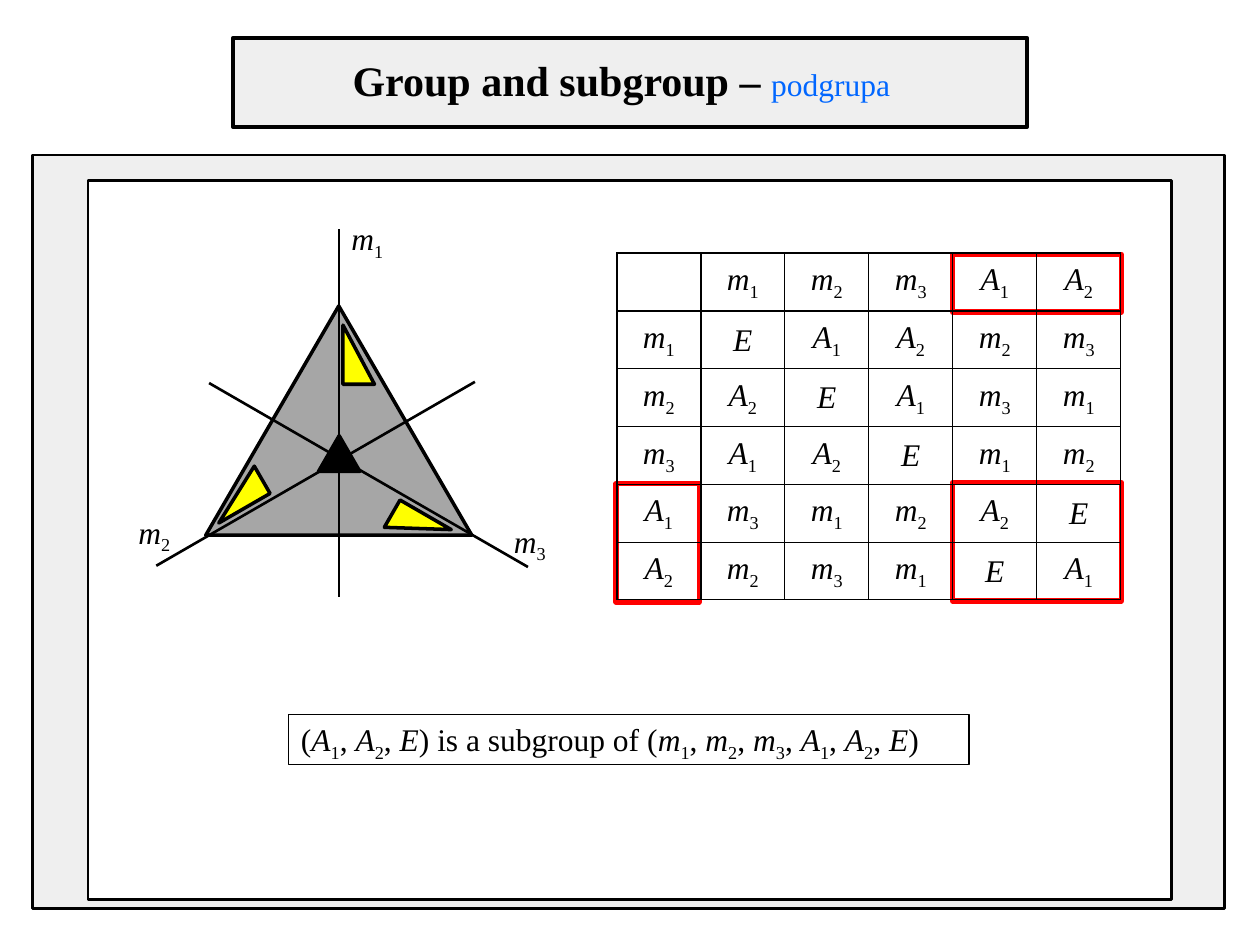
from itertools import groupby

from lxml.etree import SubElement
from pptx import Presentation
from pptx.dml.color import RGBColor
from pptx.enum.shapes import MSO_CONNECTOR, MSO_SHAPE
from pptx.enum.text import MSO_ANCHOR, MSO_AUTO_SIZE, PP_ALIGN
from pptx.oxml.ns import qn
from pptx.util import Pt

BLACK, RED, YELLOW, BLUE = "000000", "FF0000", "FFFF00", "0066FF"
PANEL, GREY, WHITE = "EFEFEF", "A6A6A6", "FFFFFF"


def rgb(value):
    return RGBColor.from_string(value)


def notation_kind(char):
    if char in "mAE":
        return "symbol"
    return "index" if char.isdigit() else "plain"


class SlideBuilder:
    font = "Times New Roman"
    size = 18

    def __init__(self, slide):
        self.slide = slide
        self.shapes = slide.shapes

    def run(self, paragraph, text, size=size, color=BLACK, bold=False, italic=False):
        run = paragraph.add_run()
        run.text = text
        run.font.name = self.font
        run.font.size = Pt(size)
        run.font.color.rgb = rgb(color)
        run.font.bold = bold
        run.font.italic = italic
        return run

    def notation(self, paragraph, text):
        for kind, chars in groupby(text, notation_kind):
            run = self.run(paragraph, "".join(chars), italic=kind == "symbol")
            if kind == "index":
                run.font._element.set("baseline", "-25000")

    def shape(self, preset, box, fill=None, line=BLACK, weight=1.5, rotation=0):
        shape = self.shapes.add_shape(preset, *map(Pt, box))
        shape.shadow.inherit = False
        shape.rotation = rotation
        if fill:
            shape.fill.solid()
            shape.fill.fore_color.rgb = rgb(fill)
        else:
            shape.fill.background()
        shape.line.color.rgb = rgb(line)
        shape.line.width = Pt(weight)
        return shape

    def line(self, start, end, weight=1.5):
        connector = self.shapes.add_connector(
            MSO_CONNECTOR.STRAIGHT, *map(Pt, start + end))
        connector.line.color.rgb = rgb(BLACK)
        connector.line.width = Pt(weight)
        SubElement(connector._element.spPr, qn("a:effectLst"))

    def text(self, box, notation=""):
        label = self.shapes.add_textbox(*map(Pt, box))
        label.text_frame.word_wrap = False
        label.text_frame.auto_size = MSO_AUTO_SIZE.SHAPE_TO_FIT_TEXT
        self.notation(label.text_frame.paragraphs[0], notation)
        return label

    def border(self, cell, side, weight):
        edge = SubElement(cell._tc.get_or_add_tcPr(), qn(f"a:ln{side}"), w=str(Pt(weight)))
        fill = SubElement(edge, qn("a:solidFill"))
        SubElement(fill, qn("a:srgbClr"), val=BLACK)

    def table(self, left, top, column_width, row_height, rows):
        count = len(rows)
        table = self.shapes.add_table(
            count, count, Pt(left), Pt(top),
            Pt(column_width * count), Pt(row_height * count)).table
        table.first_row = table.horz_banding = False
        heavy_edges = (0, 1, count)
        for r, row in enumerate(rows):
            table.rows[r].height = Pt(row_height)
            for c, product in enumerate(row):
                cell = table.cell(r, c)
                cell.margin_left = cell.margin_right = cell.margin_top = Pt(0.72)
                cell.margin_bottom = 0
                cell.vertical_anchor = MSO_ANCHOR.MIDDLE
                for side, edge in (("L", c), ("R", c + 1), ("T", r), ("B", r + 1)):
                    self.border(cell, side, 1 if edge in heavy_edges else 0.5)
                cell.fill.background()
                paragraph = cell.text_frame.paragraphs[0]
                paragraph.alignment = PP_ALIGN.CENTER
                self.notation(paragraph, product)


def main():
    prs = Presentation()
    prs.slide_width, prs.slide_height = Pt(720), Pt(540)
    builder = SlideBuilder(prs.slides.add_slide(prs.slide_layouts[6]))

    builder.shape(MSO_SHAPE.RECTANGLE, (133.2, 21.6, 453.6, 51), PANEL, weight=2.25)
    title = builder.text((194.4, 27.4, 331.2, 36)).text_frame.paragraphs[0]
    builder.run(title, "Group and subgroup – ", 24, bold=True)
    builder.run(title, "podgrupa", color=BLUE)
    builder.run(title, " ", 24, bold=True)

    builder.shape(MSO_SHAPE.RECTANGLE, (18.5, 88.6, 681.4, 430.6), PANEL)
    builder.shape(MSO_SHAPE.RECTANGLE, (50.4, 103, 619.2, 411), WHITE)

    subgroup_frames = [
        (544.3, 145.3, 96.5, 33),
        (544.3, 275.8, 96.5, 67.6),
        (352, 276.4, 47.6, 67.6),
    ]
    for frame in subgroup_frames:
        builder.shape(MSO_SHAPE.RECTANGLE, frame, line=RED, weight=3)

    products = [
        ["", "m1", "m2", "m3", "A1", "A2"],
        ["m1", "E", "A1", "A2", "m2", "m3"],
        ["m2", "A2", "E", "A1", "m3", "m1"],
        ["m3", "A1", "A2", "E", "m1", "m2"],
        ["A1", "m3", "m1", "m2", "A2", "E"],
        ["A2", "m2", "m3", "m1", "E", "A1"],
    ]
    builder.table(352.5, 144.7, 48, 33, products)

    builder.shape(MSO_SHAPE.ISOSCELES_TRIANGLE, (117.6, 174.8, 152, 131), GREY, weight=2)
    mirrors = [
        ((193.7, 131), (193.7, 341.3), "m1", (193.7, 121.7)),
        ((301.7, 324), (119.5, 218.9), "m3", (286.6, 294.5)),
        ((89.3, 323.3), (271.4, 218.2), "m2", (72, 289.4)),
    ]
    for start, end, _, _ in mirrors:
        builder.line(start, end)
    for _, _, mirror, corner in mirrors:
        builder.text(corner + (33.8, 28.8), mirror)
    builder.shape(MSO_SHAPE.ISOSCELES_TRIANGLE, (182, 249, 23.6, 20.4), BLACK, weight=2)

    builder_box = (164.9, 408.2, 388.8, 28.8)
    statement = builder.text(
        builder_box, "(A1, A2, E) is a subgroup of (m1, m2, m3, A1, A2, E)")
    statement.line.color.rgb = rgb(BLACK)
    statement.line.width = Pt(0.75)

    motif_corners = [(196, 185.8), (229.7, 285.1), (126.2, 265.7)]
    for turn, corner in enumerate(motif_corners):
        motif = builder.shape(MSO_SHAPE.ISOSCELES_TRIANGLE, corner + (18, 33.8),
                              YELLOW, weight=2, rotation=120 * turn)
        motif.adjustments[0] = 0

    prs.save("out.pptx")


if __name__ == "__main__":
    main()
